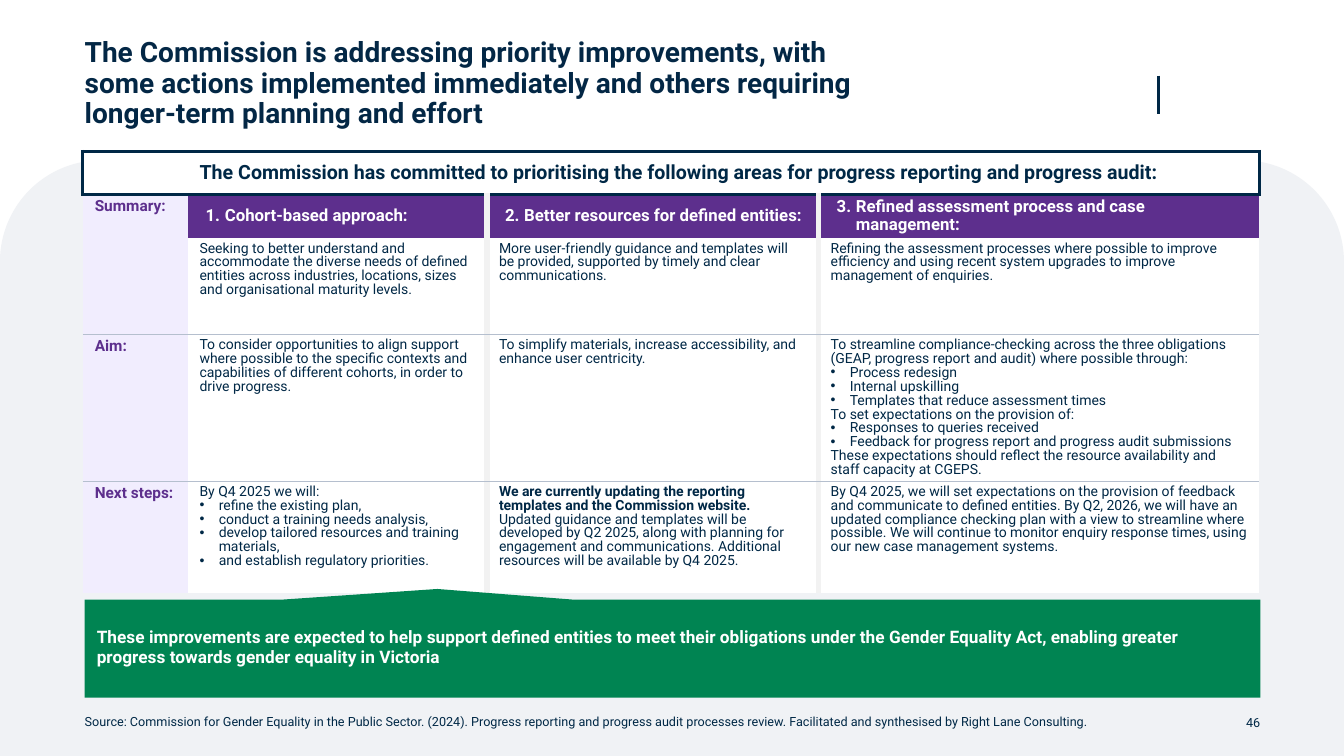
from lxml import etree
from pptx import Presentation
from pptx.dml.color import RGBColor
from pptx.enum import shapes, text
from pptx.oxml import ns
from pptx.util import Inches, Pt

NAVY = RGBColor(0x00, 0x28, 0x46)
INK = RGBColor(0x03, 0x27, 0x45)
PLUM = RGBColor(0x5D, 0x2F, 0x8D)
LILAC = RGBColor(0xF1, 0xED, 0xFE)
GREEN = RGBColor(0x00, 0x84, 0x52)
WHITE = RGBColor(0xFF, 0xFF, 0xFF)
PALE = RGBColor(0xF0, 0xF2, 0xF5)
GREY = RGBColor(0xF2, 0xF2, 0xF2)
STEEL = RGBColor(0xB5, 0xBF, 0xCE)

FONT = "Roboto"
TITLE = ("The Commission is addressing priority improvements, with some actions "
         "implemented immediately and others requiring longer-term planning and effort")
BANNER = ("The Commission has committed to prioritising the following areas for "
          "progress reporting and progress audit:")
HEADS = ["Cohort-based approach:", "Better resources for defined entities:",
         "Refined assessment process and case management:"]
LABELS = {1: "Summary:", 3: "Aim:", 4: "Next steps:"}
BODY = [
    [
        [("text", "Seeking to better understand and accommodate the diverse needs of defined "
                  "entities across industries, locations, sizes and organisational maturity levels.")],
        [("text", "More user-friendly guidance and templates will be provided, supported by "
                  "timely and clear communications.")],
        [("text", "Refining the assessment processes where possible to improve efficiency and "
                  "using recent system upgrades to improve management of enquiries.")],
    ],
    [
        [("text", "To consider opportunities to align support where possible to the specific "
                  "contexts and capabilities of different cohorts, in order to drive progress.")],
        [("text", "To simplify materials, increase accessibility, and enhance user centricity.")],
        [("text", "To streamline compliance-checking across the three obligations (GEAP, "
                  "progress report and audit) where possible through:"),
         ("bullet", "Process redesign"),
         ("bullet", "Internal upskilling"),
         ("bullet", "Templates that reduce assessment times"),
         ("text", "To set expectations on the provision of:"),
         ("bullet", "Responses to queries received"),
         ("bullet", "Feedback for progress report and progress audit submissions"),
         ("text", "These expectations should reflect the resource availability and staff "
                  "capacity at CGEPS.")],
    ],
    [
        [("text", "By Q4 2025 we will:"),
         ("bullet", "refine the existing plan,"),
         ("bullet", "conduct a training needs analysis,"),
         ("bullet", "develop tailored resources and training materials,"),
         ("bullet", "and establish regulatory priorities.")],
        [("bold", "We are currently updating the reporting templates and the Commission website."),
         ("text", "Updated guidance and templates will be developed by Q2 2025, along with "
                  "planning for engagement and communications. Additional resources will be "
                  "available by Q4 2025.")],
        [("text", "By Q4 2025, we will set expectations on the provision of feedback and "
                  "communicate to defined entities. By Q2, 2026, we will have an updated "
                  "compliance checking plan with a view to streamline where possible. We will "
                  "continue to monitor enquiry response times, using our new case management "
                  "systems.")],
    ],
]
CLAIM = ("These improvements are expected to help support defined entities to meet their "
         "obligations under the Gender Equality Act, enabling greater progress towards gender "
         "equality in Victoria")
SOURCE = ("Source: Commission for Gender Equality in the Public Sector. (2024). Progress "
          "reporting and progress audit processes review. Facilitated and synthesised by "
          "Right Lane Consulting.")
PAGE = "46"
COLS = [1.04, 2.97, 3.29, 4.37]
ROWS = [0.43, 0.43, 0.96, 1.4, 1.11]

FRAME, HAIR, GAP = (NAVY, 2.25), (STEEL, 0.5), (GREY, 4.5)
RULES = [FRAME, FRAME, None, HAIR, HAIR, None]
SIDES = [None, None, GAP, GAP, None]


def box(left, top, width, height):
    """Turn four lengths in inches into slide units."""
    return [Inches(v) for v in (left, top, width, height)]


def mark(para, tag, indent, **attrs):
    """Give a paragraph a list marker and a hanging indent."""
    props = para._p.get_or_add_pPr()
    props.set("marL", str(Inches(indent)))
    props.set("indent", str(Inches(-0.19 if indent else 0)))
    if tag == "buChar":
        etree.SubElement(props, ns.qn("a:buFont"), typeface="Arial")
    etree.SubElement(props, ns.qn("a:" + tag), **attrs)


def write(para, words, size, color, bold=False, space=None):
    """Add one styled run to a paragraph."""
    para.line_spacing = space
    run = para.add_run()
    run.text = words
    font = run.font
    font.name, font.size, font.bold = FONT, Pt(size), bold
    font.color.rgb = color


def setup(frame, margins=(0, 0, 0, 0)):
    """Set wrap, middle anchor and margins; return the first paragraph."""
    frame.word_wrap = True
    frame.auto_size = text.MSO_AUTO_SIZE.NONE
    frame.vertical_anchor = text.MSO_ANCHOR.MIDDLE
    (frame.margin_left, frame.margin_top,
     frame.margin_right, frame.margin_bottom) = [Inches(v) for v in margins]
    return frame.paragraphs[0]


def paint(shape, color):
    """Fill a shape flat, with no line or shadow."""
    shape.shadow.inherit = False
    shape.fill.solid()
    shape.fill.fore_color.rgb = color
    shape.line.fill.background()


def edge(cell, side, rule):
    """Draw or clear one border of a cell."""
    line = etree.SubElement(cell._tc.get_or_add_tcPr(), ns.qn("a:ln" + side))
    if rule is None:
        line.set("w", "0")
        etree.SubElement(line, ns.qn("a:noFill"))
        return
    color, width = rule
    line.set("w", str(Pt(width)))
    fill = etree.SubElement(line, ns.qn("a:solidFill"))
    etree.SubElement(fill, ns.qn("a:srgbClr"), val=str(color))


def style(cell, row, col):
    """Set the borders, fill and margins that a grid position calls for."""
    if row:
        left, right = SIDES[col], SIDES[col + 1]
    else:
        left, right = (None if col else FRAME), (FRAME if col else None)
    foot = 3 if (row, col) == (1, 0) else row + 1
    for side, rule in zip("LRTB", (left, right, RULES[row], RULES[foot])):
        edge(cell, side, rule)
    cell.fill.solid()
    cell.fill.fore_color.rgb = (WHITE if row == 0 else LILAC if col == 0
                                else PLUM if row == 1 else WHITE)
    cell.margin_left = cell.margin_right = Inches(0.12)
    cell.margin_top = cell.margin_bottom = Inches(0.04)
    if row < 2 and col:
        cell.vertical_anchor = text.MSO_ANCHOR.MIDDLE


def fill_table(slide):
    """Build the table of priority areas."""
    grid = slide.shapes.add_table(len(ROWS), len(COLS),
                                  *box(0.82, 1.5, sum(COLS), sum(ROWS))).table
    grid.first_row = grid.horz_banding = False
    for col, width in zip(grid.columns, COLS):
        col.width = Inches(width)
    for row, height in zip(grid.rows, ROWS):
        row.height = Inches(height)
    for r in range(len(ROWS)):
        for c in range(len(COLS)):
            style(grid.cell(r, c), r, c)
    grid.cell(0, 1).merge(grid.cell(0, 3))
    grid.cell(1, 0).merge(grid.cell(2, 0))
    write(grid.cell(0, 1).text_frame.paragraphs[0], BANNER, 14, NAVY, True, 0.9)
    for r, label in LABELS.items():
        write(grid.cell(r, 0).text_frame.paragraphs[0], label, 11, PLUM, True, 0.9)
    for c, head in enumerate(HEADS, 1):
        para = grid.cell(1, c).text_frame.paragraphs[0]
        mark(para, "buAutoNum", 0.25, type="arabicPeriod", startAt=str(c))
        write(para, head, 12, WHITE, True, 0.9)
    for r, row in enumerate(BODY, 2):
        for c, paras in enumerate(row, 1):
            frame = grid.cell(r, c).text_frame
            for i, (kind, words) in enumerate(paras):
                para = frame.add_paragraph() if i else frame.paragraphs[0]
                if kind == "bullet":
                    mark(para, "buChar", 0.19, char="•")
                write(para, words, 10, NAVY, kind == "bold", 0.85)


def main():
    """Build and save the slide."""
    deck = Presentation()
    deck.slide_width, deck.slide_height = Inches(13.33), Inches(7.5)
    slide = deck.slides.add_slide(deck.slide_layouts[1])
    items = slide.shapes
    title, source = items.title, slide.placeholders[1]

    panel = items.add_shape(shapes.MSO_SHAPE.ROUND_2_SAME_RECTANGLE, *box(0, 1.59, 13.33, 5.91))
    panel.adjustments[0] = 0.17
    paint(panel, PALE)
    items._spTree.insert(2, panel._element)

    bar = items.add_connector(shapes.MSO_CONNECTOR.STRAIGHT, *box(11.49, 0.75, 11.49, 1.13))
    bar.line.color.rgb, bar.line.width = NAVY, Pt(1.5)
    etree.SubElement(bar._element.spPr, ns.qn("a:effectLst"))

    fill_table(slide)

    claim = items.add_shape(shapes.MSO_SHAPE.RECTANGULAR_CALLOUT, *box(0.84, 5.95, 11.66, 0.97))
    claim.adjustments[0], claim.adjustments[1] = -0.2, -0.61
    paint(claim, GREEN)
    para = setup(claim.text_frame, (0.12, 0.08, 0.12, 0.12))
    para.alignment, para.space_after = text.PP_ALIGN.LEFT, Pt(5.3)
    write(para, CLAIM, 12.3, WHITE, True)

    title.left, title.top, title.width, title.height = box(0.84, 0.31, 7.76, 1.05)
    para = setup(title.text_frame)
    para.alignment = text.PP_ALIGN.LEFT
    write(para, TITLE, 20, INK, True, 0.9)

    source.left, source.top, source.width, source.height = box(0.84, 7.03, 10.63, 0.28)
    para = setup(source.text_frame)
    mark(para, "buNone", 0)
    para.space_before = Pt(0)
    write(para, SOURCE, 9, NAVY, False, 0.9)

    page = items.add_textbox(*box(11.71, 7.03, 0.79, 0.28))
    para = setup(page.text_frame)
    para.alignment = text.PP_ALIGN.RIGHT
    write(para, PAGE, 9, NAVY)

    deck.save("out.pptx")


if __name__ == "__main__":
    main()
